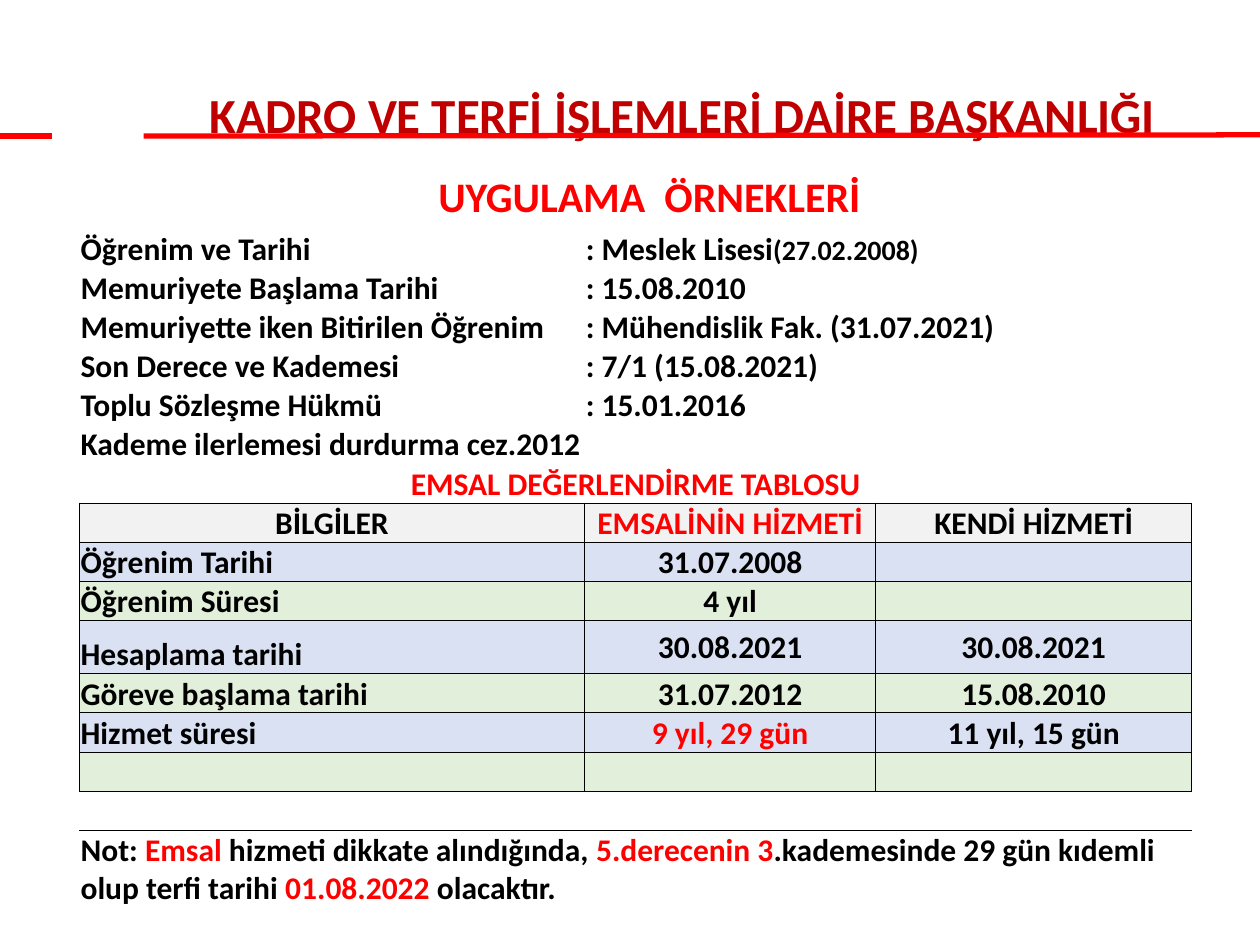
from dataclasses import dataclass
from typing import Optional

from lxml.etree import SubElement
from pptx import Presentation
from pptx.dml.color import RGBColor
from pptx.enum.shapes import MSO_CONNECTOR
from pptx.enum.text import MSO_ANCHOR, PP_ALIGN
from pptx.oxml.ns import qn
from pptx.util import Inches, Pt

BLACK = RGBColor(0x00, 0x00, 0x00)
RED = RGBColor(0xFF, 0x00, 0x00)
DARK_RED = RGBColor(0xC0, 0x00, 0x00)
GREY = RGBColor(0xF2, 0xF2, 0xF2)
BLUE = RGBColor(0xD9, 0xE1, 0xF2)
GREEN = RGBColor(0xE2, 0xEF, 0xDA)

FONT = "Calibri"
PLAIN_STYLE = "{2D5ABB26-0587-4C30-8999-92F81FD0307C}"
WIDTH, HEIGHT = Inches(10), Inches(7.5)
COLUMNS = (40.1, 23.1, 4.2, 20.9)  # percent of the slide width
ROW = 4.14  # percent of the slide height
MIDDLE, BOTTOM = MSO_ANCHOR.MIDDLE, MSO_ANCHOR.BOTTOM


@dataclass(frozen=True)
class Span:
    text: str
    color: RGBColor = BLACK
    size: float = 18


@dataclass(frozen=True)
class Cell:
    spans: tuple[Span, ...] = ()
    centered: bool = False
    anchor: MSO_ANCHOR = BOTTOM


@dataclass(frozen=True)
class Row:
    cells: tuple[Cell, ...]
    merge: Optional[tuple[int, int]] = (2, 3)
    fill: Optional[RGBColor] = None
    borders: tuple[str, ...] = ()
    height: float = ROW


def across(percent: float) -> int:
    return round(WIDTH * percent / 100)


def down(percent: float) -> int:
    return round(HEIGHT * percent / 100)


def write(paragraph, spans: tuple[Span, ...], centered: bool) -> None:
    paragraph.alignment = PP_ALIGN.CENTER if centered else PP_ALIGN.LEFT
    for span in spans:
        run = paragraph.add_run()
        run.text = span.text
        run.font.name, run.font.size, run.font.bold = FONT, Pt(span.size), True
        run.font.color.rgb = span.color


def add_heading(page, left, top, width, height, span: Span) -> None:
    box = page.shapes.add_textbox(across(left), down(top), across(width), down(height))
    box.text_frame.word_wrap = True
    box.text_frame.vertical_anchor = BOTTOM
    write(box.text_frame.paragraphs[0], (span,), True)


def add_rule(page, start, end, start_y, end_y) -> None:
    rule = page.shapes.add_connector(
        MSO_CONNECTOR.STRAIGHT, across(start), down(start_y), across(end), down(end_y))
    rule.line.color.rgb = RED
    rule.line.width = Pt(3)
    SubElement(rule._element.spPr, qn("a:effectLst"))


def add_border(cell, side: str) -> None:
    line = SubElement(cell._tc.get_or_add_tcPr(), qn(f"a:ln{side}"), w=str(Pt(0.5)))
    SubElement(SubElement(line, qn("a:solidFill")), qn("a:srgbClr"), val=str(BLACK))


def add_table(page, left, top, rows: list[Row]) -> None:
    frame = page.shapes.add_table(
        len(rows), len(COLUMNS), across(left), down(top),
        across(sum(COLUMNS)), down(sum(row.height for row in rows)))
    table = frame.table
    table._tbl.tblPr.find(qn("a:tableStyleId")).text = PLAIN_STYLE
    table.first_row = table.horz_banding = False
    for column, share in zip(table.columns, COLUMNS):
        column.width = across(share)
    for number, row in enumerate(rows):
        table.rows[number].height = down(row.height)
        for cell in table.rows[number].cells:
            cell.margin_left = cell.margin_right = cell.margin_top = Inches(0.01)
            cell.margin_bottom = 0
            for side in row.borders:
                add_border(cell, side)
            if row.fill is None:
                cell.fill.background()
            else:
                cell.fill.solid()
                cell.fill.fore_color.rgb = row.fill
        if row.merge:
            first, last = row.merge
            table.cell(number, first).merge(table.cell(number, last))
        for position, content in enumerate(row.cells):
            cell = table.cell(number, position)
            cell.vertical_anchor = content.anchor
            write(cell.text_frame.paragraphs[0], content.spans, content.centered)


def label(text: str) -> Cell:
    return Cell((Span(text),))


def value(text: str, color: RGBColor = BLACK, anchor: MSO_ANCHOR = BOTTOM) -> Cell:
    return Cell((Span(text, color),), True, anchor)


def grid_row(fill: RGBColor, *cells: Cell, height: float = ROW) -> Row:
    return Row(cells, fill=fill, borders=("L", "R", "T", "B"), height=height)


# Personal facts, comparison grid and closing note share one table
NOTE = (
    Span("Not: "), Span("Emsal", RED), Span(" hizmeti dikkate alındığında, "),
    Span("5.derecenin 3", RED),
    Span(".kademesinde 29 gün kıdemli olup terfi tarihi "),
    Span("01.08.2022 ", RED), Span("olacaktır."),
)
ROWS = [
    Row((label("Öğrenim ve Tarihi"),
         Cell((Span(": Meslek Lisesi"), Span("(27.02.2008)", size=16)))), (1, 2)),
    Row((label("Memuriyete Başlama Tarihi"), label(": 15.08.2010")), (1, 2)),
    Row((label("Memuriyette iken Bitirilen Öğrenim"),
         label(": Mühendislik Fak. (31.07.2021)")), (1, 3)),
    Row((label("Son Derece ve Kademesi"), label(": 7/1 (15.08.2021)"))),
    Row((label("Toplu Sözleşme Hükmü"), label(": 15.01.2016"))),
    Row((label("Kademe ilerlemesi durdurma cez.2012"),)),
    Row((value("EMSAL DEĞERLENDİRME TABLOSU", RED, MIDDLE),), (0, 3), borders=("B",)),
    grid_row(GREY, value("BİLGİLER"), value("EMSALİNİN HİZMETİ", RED),
             value("KENDİ HİZMETİ")),
    grid_row(BLUE, label("Öğrenim Tarihi"), value("31.07.2008")),
    grid_row(GREEN, label("Öğrenim Süresi"), value("4 yıl")),
    grid_row(BLUE, label("Hesaplama tarihi"), value("30.08.2021", anchor=MIDDLE),
             value("30.08.2021", anchor=MIDDLE), height=5.67),
    grid_row(GREEN, label("Göreve başlama tarihi"), value("31.07.2012"),
             value("15.08.2010", anchor=MIDDLE)),
    grid_row(BLUE, label("Hizmet süresi"), value("9 yıl, 29 gün", RED),
             value("11 yıl, 15 gün", anchor=MIDDLE)),
    grid_row(GREEN),
    Row((), borders=("T",)),
    Row((Cell(NOTE, anchor=MIDDLE),), (0, 3), height=8.2),
]


def main() -> None:
    deck = Presentation()
    deck.slide_width, deck.slide_height = WIDTH, HEIGHT
    page = deck.slides.add_slide(deck.slide_layouts[6])

    # Headings
    add_heading(page, 11.2, 17.33, 80.7, 6.67, Span("UYGULAMA  ÖRNEKLERİ", RED, 24))
    add_heading(page, 13.8, 2, 80.7, 13.87,
                Span("KADRO VE TERFİ İŞLEMLERİ DAİRE BAŞKANLIĞI", DARK_RED, 28))

    add_table(page, 6.3, 24.27, ROWS)

    # Red rules beside and under the title
    add_rule(page, 11.4, 100, 14.4, 14.27)
    add_rule(page, 0, 4.1, 14.4, 14.4)

    deck.save("out.pptx")


if __name__ == "__main__":
    main()
